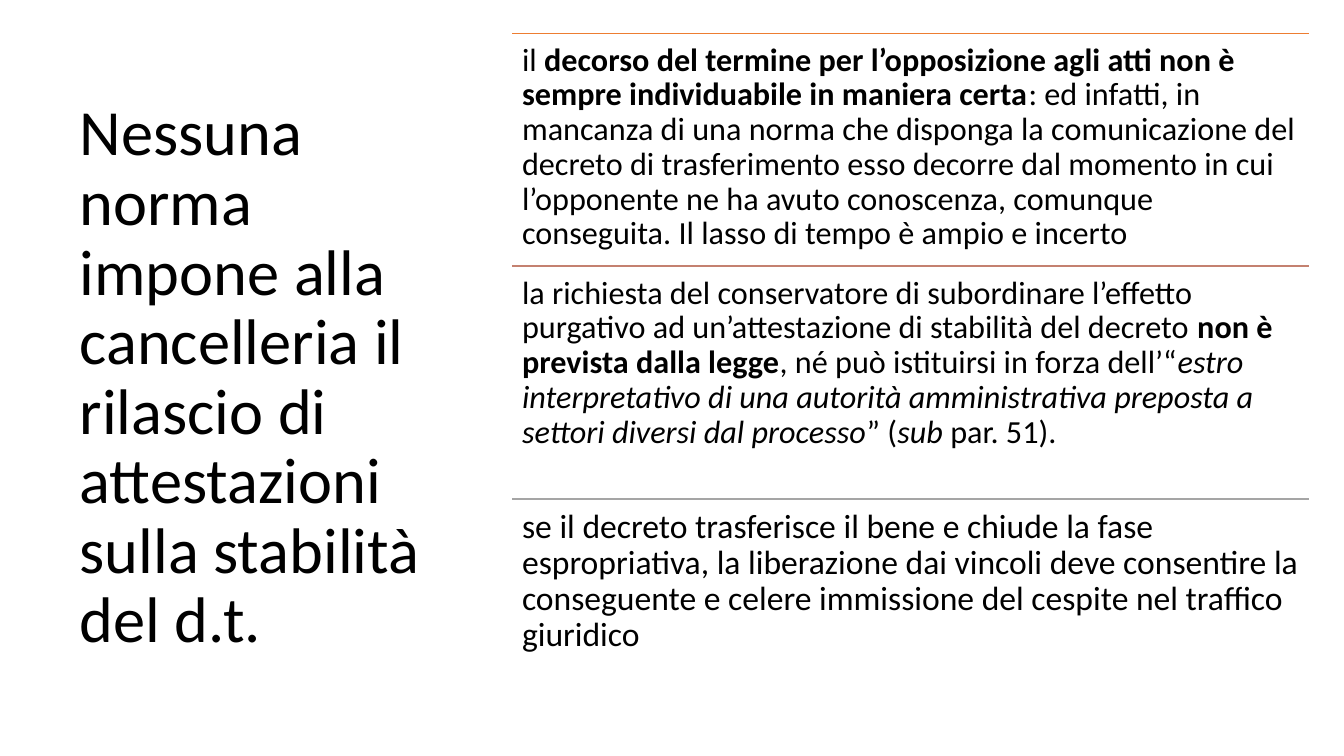
from pptx import Presentation
from pptx.dml.color import RGBColor
from pptx.enum.shapes import MSO_CONNECTOR
from pptx.enum.text import MSO_ANCHOR, MSO_AUTO_SIZE, PP_ALIGN
from pptx.oxml.ns import qn
from pptx.util import Inches, Pt
from lxml.etree import SubElement

FONT = "Calibri"
LEFT, TOP, WIDTH, ROW_HEIGHT = 5.08, 0.33, 7.9, 2.31

# Each row: rule colour, text size, runs as (text, style)
ROWS = [
    ("ED7D31", 23, [
        ("il ", ""),
        ("decorso del termine per l’opposizione agli atti non è sempre "
         "individuabile in maniera certa", "b"),
        (": ed infatti, in mancanza di una norma che disponga la comunicazione "
         "del decreto di trasferimento esso decorre dal momento in cui "
         "l’opponente ne ha avuto conoscenza, comunque conseguita. "
         "Il lasso di tempo è ampio e incerto", ""),
    ]),
    ("C48170", 23, [
        ("la richiesta del conservatore di subordinare l’effetto purgativo ad "
         "un’attestazione di stabilità del decreto ", ""),
        ("non è prevista dalla legge", "b"),
        (", né può istituirsi in forza dell’“", ""),
        ("estro interpretativo di una autorità amministrativa preposta a "
         "settori diversi dal processo", "i"),
        ("” (", ""),
        ("sub", "i"),
        (" par. 51).", ""),
    ]),
    ("A5A5A5", 24, [
        ("se il decreto trasferisce il bene e chiude la fase espropriativa, la "
         "liberazione dai vincoli deve consentire la conseguente e celere "
         "immissione del cespite nel traffico giuridico", ""),
    ]),
]


def rgb(value):
    return RGBColor.from_string(value)


def format_paragraph(p, size):
    p.alignment = PP_ALIGN.LEFT
    p.line_spacing = 0.9
    p.font.name = FONT
    p.font.size = Pt(size)
    p.font.color.rgb = rgb("000000")


def set_title(s, text):
    title = s.shapes.title
    title.left, title.top = Inches(0.69), Inches(0.7)
    title.width, title.height = Inches(3.74), Inches(6.11)
    tf = title.text_frame
    tf.text = text
    tf.word_wrap = True
    tf.auto_size = MSO_AUTO_SIZE.NONE
    tf.vertical_anchor = MSO_ANCHOR.MIDDLE
    format_paragraph(tf.paragraphs[0], 46)


def add_rule(s, top, color):
    line = s.shapes.add_connector(
        MSO_CONNECTOR.STRAIGHT, Inches(LEFT), Inches(top),
        Inches(LEFT + WIDTH), Inches(top))
    line.line.color.rgb = rgb(color)
    line.line.width = Pt(1)
    SubElement(line._element.spPr, qn("a:effectLst"))


def add_row_text(s, top, size, runs):
    box = s.shapes.add_textbox(
        Inches(LEFT), Inches(top), Inches(WIDTH), Inches(ROW_HEIGHT))
    tf = box.text_frame
    tf.word_wrap = True
    tf.margin_left = tf.margin_right = Inches(0.1)
    tf.margin_top = tf.margin_bottom = Inches(0.1)
    p = tf.paragraphs[0]
    format_paragraph(p, size)
    for text, style in runs:
        r = p.add_run()
        r.text = text
        if style:
            r.font.bold = style == "b"
            r.font.italic = style == "i"


def main():
    prs = Presentation()
    prs.slide_width, prs.slide_height = Inches(13.33), Inches(7.5)
    s = prs.slides.add_slide(prs.slide_layouts[5])

    # Title on the left
    set_title(s, "Nessuna norma impone alla cancelleria il rilascio di "
                 "attestazioni sulla stabilità del d.t.")

    # Ruled rows on the right
    for i, (color, size, runs) in enumerate(ROWS):
        top = TOP + i * ROW_HEIGHT
        add_rule(s, top, color)
        add_row_text(s, top, size, runs)

    prs.save("out.pptx")


if __name__ == "__main__":
    main()
